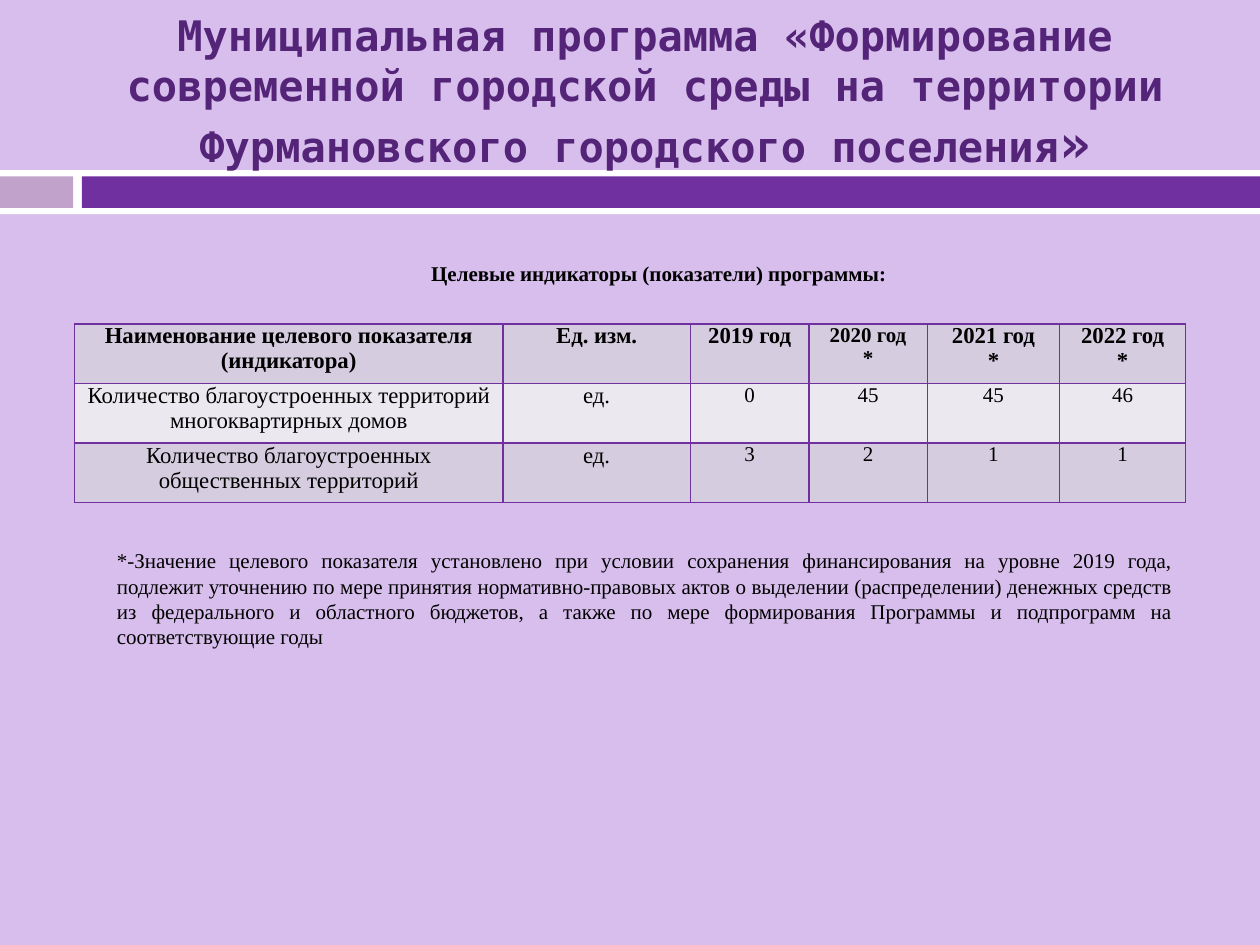
from lxml.etree import SubElement
from pptx import Presentation
from pptx.dml.color import RGBColor
from pptx.enum.shapes import MSO_SHAPE
from pptx.enum.text import MSO_ANCHOR, PP_ALIGN
from pptx.oxml.ns import qn
from pptx.util import Inches, Pt

LILAC = RGBColor(0xD8, 0xBE, 0xEC)
WHITE = RGBColor(0xFF, 0xFF, 0xFF)
MAUVE = RGBColor(0xC0, 0xA2, 0xCA)
PURPLE = RGBColor(0x70, 0x30, 0xA0)
DARK_PURPLE = RGBColor(0x54, 0x24, 0x78)
BLACK = RGBColor(0, 0, 0)
DARK_ROW = RGBColor(0xD5, 0xCD, 0xDF)
LIGHT_ROW = RGBColor(0xEB, 0xE8, 0xF0)

SERIF = "Times New Roman"
MONO = "DejaVu Sans Mono"

TITLE = (
    "Муниципальная программа «Формирование современной городской среды "
    "на территории Фурмановского городского поселения"
)
HEADING = "Целевые индикаторы (показатели) программы:"
FOOTNOTE = (
    "*-Значение целевого показателя установлено при условии сохранения "
    "финансирования на уровне 2019 года, подлежит уточнению по мере принятия "
    "нормативно-правовых актов о выделении (распределении) денежных средств "
    "из федерального и областного бюджетов, а также по мере формирования "
    "Программы и подпрограмм на соответствующие годы"
)
INDICATORS = [
    ["Наименование целевого показателя (индикатора)", "Ед. изм.", "2019 год",
     "2020 год\n*", "2021 год\n*", "2022 год\n*"],
    ["Количество благоустроенных территорий многоквартирных домов", "ед.",
     "0", "45", "45", "46"],
    ["Количество благоустроенных общественных территорий", "ед.",
     "3", "2", "1", "1"],
]
COLUMN_WIDTHS = [3.4, 1.49, 0.94, 0.94, 1.05, 1]


def style_paragraph(paragraph, size, align, font=SERIF, color=BLACK, bold=False):
    """Set the alignment and font of a whole paragraph."""
    paragraph.alignment = align
    paragraph.font.name = font
    paragraph.font.size = Pt(size)
    paragraph.font.color.rgb = color
    paragraph.font.bold = bold


def add_band(slide, left, top, width, height, color):
    """Add a plain filled rectangle."""
    band = slide.shapes.add_shape(
        MSO_SHAPE.RECTANGLE, Inches(left), Inches(top), Inches(width), Inches(height)
    )
    band.shadow.inherit = False
    band.fill.solid()
    band.fill.fore_color.rgb = color
    band.line.fill.background()


def add_text(slide, left, top, width, height, text, anchor=MSO_ANCHOR.TOP):
    """Add a wrapped text box and return its paragraph."""
    frame = slide.shapes.add_textbox(
        Inches(left), Inches(top), Inches(width), Inches(height)
    ).text_frame
    frame.word_wrap = True
    frame.vertical_anchor = anchor
    frame.text = text
    return frame.paragraphs[0]


def add_borders(cell):
    """Draw a thin purple border on every side of a cell."""
    properties = cell._tc.get_or_add_tcPr()
    for position, side in enumerate(("a:lnL", "a:lnR", "a:lnT", "a:lnB")):
        border = SubElement(properties, qn(side), w=str(Pt(1)))
        fill = SubElement(border, qn("a:solidFill"))
        SubElement(fill, qn("a:srgbClr"), val=str(PURPLE))
        properties.insert(position, border)


def fill_cell(cell, text, size, bold, color):
    """Write and style one table cell."""
    cell.text = text
    cell.margin_left = cell.margin_right = Inches(0.07)
    cell.margin_top = cell.margin_bottom = 0
    cell.fill.solid()
    cell.fill.fore_color.rgb = color
    add_borders(cell)
    for paragraph in cell.text_frame.paragraphs:
        style_paragraph(paragraph, size, PP_ALIGN.CENTER, bold=bold)


def add_indicators(slide):
    """Add the table of target indicators."""
    table = slide.shapes.add_table(
        len(INDICATORS), len(COLUMN_WIDTHS),
        Inches(0.59), Inches(2.57), Inches(8.82), Inches(1.42),
    ).table
    for column, width in zip(table.columns, COLUMN_WIDTHS):
        column.width = Inches(width)
    for row, texts in enumerate(INDICATORS):
        is_header = row == 0
        color = LIGHT_ROW if row % 2 else DARK_ROW
        for column, text in enumerate(texts):
            is_value = not is_header and column >= 2
            size = 12 if is_value or text.startswith("2020") else 13
            fill_cell(table.cell(row, column), text, size, is_header, color)


def main():
    """Build the slide and save it."""
    deck = Presentation()
    deck.slide_width, deck.slide_height = Inches(10), Inches(7.5)
    slide = deck.slides.add_slide(deck.slide_layouts[6])
    slide.background.fill.solid()
    slide.background.fill.fore_color.rgb = LILAC

    add_band(slide, 0, 1.35, 10, 0.35, WHITE)
    add_band(slide, 0, 1.4, 0.58, 0.25, MAUVE)
    add_band(slide, 0.65, 1.4, 9.35, 0.25, PURPLE)

    title = add_text(slide, 0.24, 0.29, 9.76, 0.87, TITLE, MSO_ANCHOR.MIDDLE)
    style_paragraph(title, 24, PP_ALIGN.CENTER, MONO, DARK_PURPLE, True)
    closing_quote = title.add_run()
    closing_quote.text = "»"
    closing_quote.font.size = Pt(30)

    heading = add_text(slide, 0.59, 2.02, 9.28, 0.58, HEADING)
    style_paragraph(heading, 12, PP_ALIGN.CENTER, bold=True)

    add_indicators(slide)

    footnote = add_text(slide, 0.83, 4.3, 8.58, 0.91, FOOTNOTE)
    style_paragraph(footnote, 12, PP_ALIGN.JUSTIFY)

    deck.save("out.pptx")


if __name__ == "__main__":
    main()
